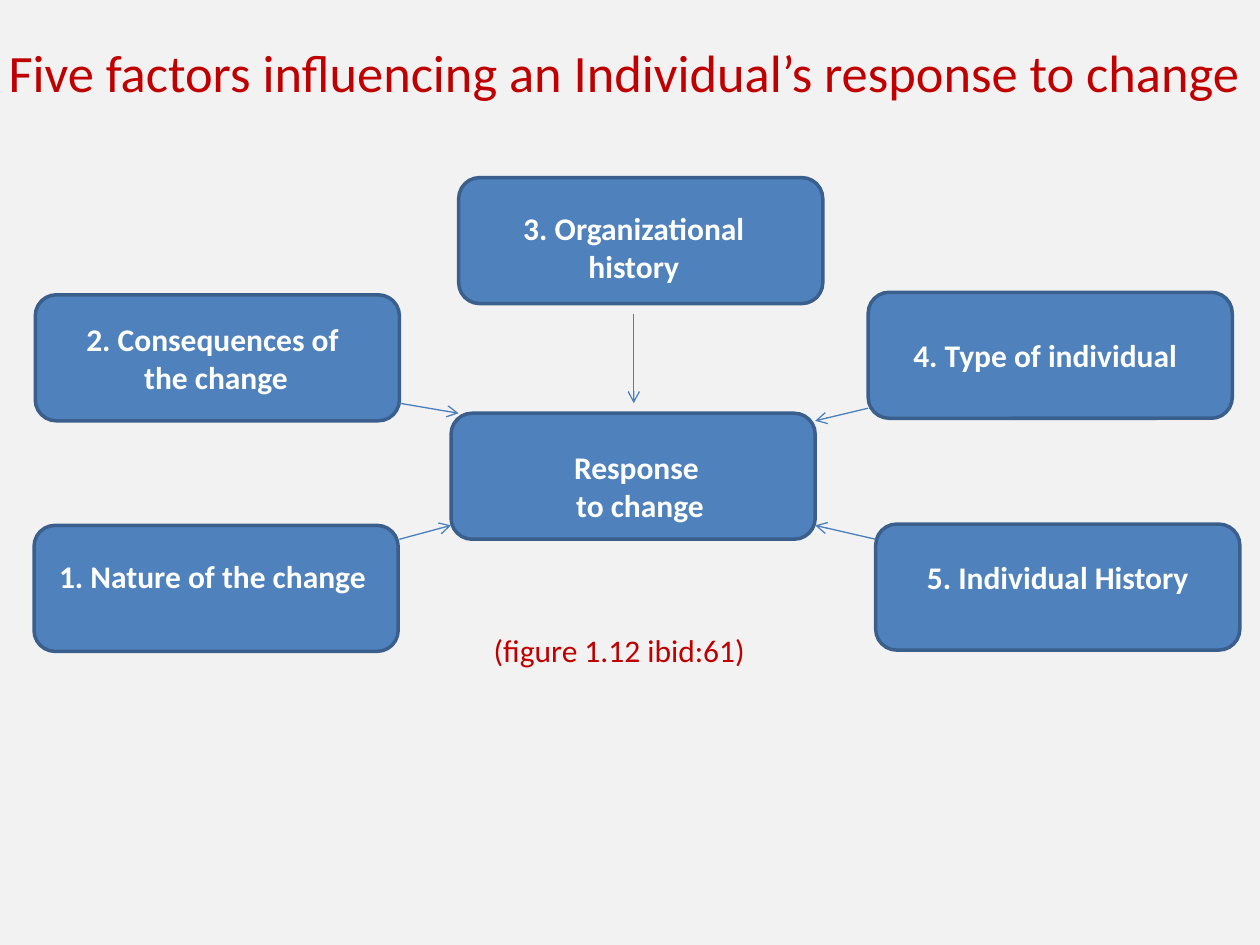
from lxml import etree
from pptx import Presentation
from pptx.dml.color import RGBColor
from pptx.enum.shapes import MSO_CONNECTOR, MSO_SHAPE
from pptx.enum.text import MSO_ANCHOR, PP_ALIGN
from pptx.oxml.ns import qn
from pptx.util import Inches, Pt

COLORS = {name: RGBColor.from_string(value) for name, value in {
    "background": "F2F2F2", "red": "C00000", "white": "FFFFFF",
    "box": "4F81BD", "border": "3A5F8C", "arrow": "4B7EBC",
}.items()}
BOX_WIDTH, BOX_HEIGHT = 2.89, 1
LEFT, CENTER = PP_ALIGN.LEFT, PP_ALIGN.CENTER

deck = Presentation()
deck.slide_width, deck.slide_height = Inches(10), Inches(7.5)
page = deck.slides.add_slide(deck.slide_layouts[6])
page.background.fill.solid()
page.background.fill.fore_color.rgb = COLORS["background"]


def add_text(place, lines, size, color, bold=False, align=LEFT):
    """Add a wrapping text box with one paragraph per line."""
    box = page.shapes.add_textbox(*map(Inches, place))
    frame = box.text_frame
    frame.word_wrap = True
    frame.text = "\n".join(lines)
    for para in frame.paragraphs:
        para.alignment = align
        para.font.name = "Calibri"
        para.font.size = Pt(size)
        para.font.bold = bold
        para.font.color.rgb = COLORS[color]
    return box


title = add_text((-0.03, 0.21, 10, 0.71),
                 ["Five factors influencing an Individual’s response to change"], 30, "red")
title.text_frame.vertical_anchor = MSO_ANCHOR.MIDDLE

# Box corner, text place, text lines, alignment
factors = [
    ((0.27, 4.17), (0.37, 4.37, 2.65, 0.4), ["1. Nature of the change"], LEFT),
    ((0.28, 2.34), (0.39, 2.49, 2.65, 0.71), ["2. Consequences of ", "the change"], CENTER),
    ((3.64, 1.41), (3.82, 1.61, 2.42, 0.71), ["3. Organizational history"], CENTER),
    ((6.89, 2.32), (7.15, 2.62, 2.36, 0.4), ["4. Type of individual"], LEFT),
    ((6.95, 4.16), (7.15, 4.38, 2.49, 0.4), ["5. Individual History"], CENTER),
    ((3.58, 3.28), (3.98, 3.51, 2.2, 0.71), ["Response ", "to change"], CENTER),
]
for (left, top), place, lines, align in factors:
    box = page.shapes.add_shape(MSO_SHAPE.ROUNDED_RECTANGLE, Inches(left), Inches(top),
                                Inches(BOX_WIDTH), Inches(BOX_HEIGHT))
    box.shadow.inherit = False
    box.fill.solid()
    box.fill.fore_color.rgb = COLORS["box"]
    box.line.color.rgb = COLORS["border"]
    box.line.width = Pt(2)
    add_text(place, lines, 18, "white", bold=True, align=align)

arrows = [
    (5.03, 2.49, 5.03, 3.2),
    (3.17, 3.2, 3.64, 3.28),
    (6.89, 3.24, 6.47, 3.34),
    (3.17, 4.28, 3.58, 4.17),
    (6.95, 4.28, 6.47, 4.17),
]
for ends in arrows:
    arrow = page.shapes.add_connector(MSO_CONNECTOR.STRAIGHT, *map(Inches, ends))
    arrow.line.color.rgb = COLORS["arrow"]
    arrow.line.width = Pt(0.75)
    etree.SubElement(arrow.line._get_or_add_ln(), qn("a:tailEnd"), type="arrow")
    etree.SubElement(arrow._element.spPr, qn("a:effectLst"))

add_text((3.82, 4.96, 2.36, 0.4), ["(figure 1.12 ibid:61)"], 18, "red")

deck.save("out.pptx")
